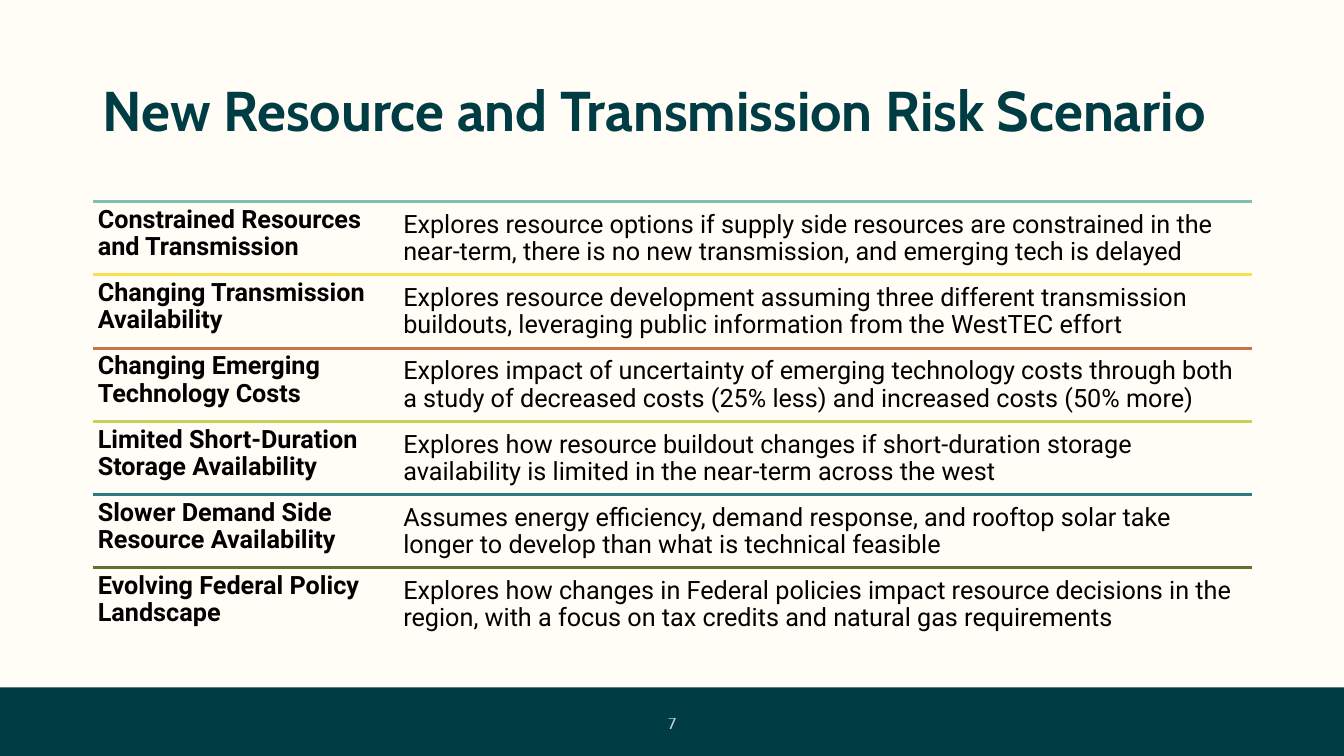
from lxml import etree
from pptx import Presentation
from pptx.dml.color import RGBColor
from pptx.enum.shapes import MSO_CONNECTOR, MSO_SHAPE
from pptx.enum.text import MSO_ANCHOR, PP_ALIGN
from pptx.oxml.ns import qn
from pptx.util import Inches, Pt

STRAIGHT = MSO_CONNECTOR.STRAIGHT
RECTANGLE = MSO_SHAPE.RECTANGLE
TOP, MIDDLE = MSO_ANCHOR.TOP, MSO_ANCHOR.MIDDLE
LEFT, CENTER = PP_ALIGN.LEFT, PP_ALIGN.CENTER

COLORS = {
    "cream": "FFFDF5", "deep_teal": "003C44", "black": "000000", "ice": "F9FBFD",
    "mint": "7EC1B1", "yellow": "F8E04E", "rust": "CE6F45",
    "lime": "C9D159", "teal": "2A7C7C", "olive": "617131",
}
HEADING_FONT, BODY_FONT = "Cabin", "Roboto"

SCENARIOS = [
    ("mint", "Constrained Resources and Transmission",
     "Explores resource options if supply side resources are constrained in the near-term, "
     "there is no new transmission, and emerging tech is delayed"),
    ("yellow", "Changing Transmission Availability",
     "Explores resource development assuming three different transmission buildouts, "
     "leveraging public information from the WestTEC effort"),
    ("rust", "Changing Emerging Technology Costs",
     "Explores impact of uncertainty of emerging technology costs through both a study of "
     "decreased costs (25% less) and increased costs (50% more)"),
    ("lime", "Limited Short-Duration Storage Availability",
     "Explores how resource buildout changes if short-duration storage availability is "
     "limited in the near-term across the west"),
    ("teal", "Slower Demand Side Resource Availability",
     "Assumes energy efficiency, demand response, and rooftop solar take longer to develop "
     "than what is technical feasible"),
    ("olive", "Evolving Federal Policy Landscape",
     "Explores how changes in Federal policies impact resource decisions in the region, "
     "with a focus on tax credits and natural gas requirements"),
]


def rgb(name):
    return RGBColor.from_string(COLORS[name])


def set_text(holder, text, font, size, color="black", bold=False, insets=(0.1, 0.05, 0.1, 0.05),
             anchor=TOP, align=LEFT, spacing=0.9):
    """Write one wrapped paragraph into holder and return its run."""
    frame = holder.text_frame
    frame.word_wrap = True
    frame.vertical_anchor = anchor
    frame.margin_left, frame.margin_top, frame.margin_right, frame.margin_bottom = map(Inches, insets)
    frame.text = text
    paragraph = frame.paragraphs[0]
    paragraph.alignment = align
    paragraph.line_spacing = spacing
    run = paragraph.runs[0]
    run.font.name, run.font.size, run.font.bold = font, Pt(size), bold
    run.font.color.rgb = rgb(color)
    return run


def add_footer(slide, left, top, width, height):
    band = slide.shapes.add_shape(RECTANGLE, *map(Inches, (left, top, width, height)))
    band.shadow.inherit = False
    band.fill.solid()
    band.fill.fore_color.rgb = rgb("deep_teal")
    band.line.fill.background()
    page = slide.shapes.add_textbox(*map(Inches, (left + 6.32, top + 0.14, 0.6, 0.43)))
    number = set_text(page, "7", HEADING_FONT, 12, "ice", insets=(0.1, 0.1, 0, 0.1),
                      anchor=MIDDLE, align=CENTER, spacing=1.0)
    number_color = number.font._element.find(".//" + qn("a:srgbClr"))
    etree.SubElement(number_color, qn("a:alpha"), val="80000")


def add_title(slide, left, top, width, height):
    title = slide.shapes.add_textbox(*map(Inches, (left, top, width, height)))
    set_text(title, "New Resource and Transmission Risk Scenario", HEADING_FONT, 40, "deep_teal",
             bold=True, anchor=MIDDLE)


def add_cell(shapes, left, top, width, height, text, inset, bold=False):
    """Place text in an unfilled rectangular outline."""
    right, bottom = left + width, top + height
    outline = shapes.build_freeform(Inches(left), Inches(top))
    corners = [(right, top), (right, bottom), (left, bottom)]
    outline.add_line_segments([(Inches(x), Inches(y)) for x, y in corners], close=True)
    cell = outline.convert_to_shape()
    cell.shadow.inherit = False
    cell.fill.background()
    cell.line.fill.background()
    set_text(cell, text, BODY_FONT, 18, bold=bold, insets=[inset] * 4)


def add_scenario(shapes, left, top, width, height, scenario):
    """Draw one row: coloured rule, bold name and description."""
    color, name, description = scenario
    rule = shapes.add_connector(STRAIGHT, *map(Inches, (left, top, left + width, top)))
    rule.line.color.rgb = rgb(color)
    rule.line.width = Pt(2.25)
    etree.SubElement(rule._element.spPr, qn("a:effectLst"))
    add_cell(shapes, left, top, 2.82, height, name, 0.05, bold=True)
    add_cell(shapes, left + 3.01, top + 0.03, width - 3.01, 0.66, description, 0.07)


def add_scenarios(slide, left, top, width, height):
    group = slide.shapes.add_group_shape()
    row_height = height / len(SCENARIOS)
    for row, scenario in enumerate(SCENARIOS):
        add_scenario(group.shapes, left, top + row * row_height, width, row_height, scenario)


def main():
    deck = Presentation()
    deck.slide_width, deck.slide_height = Inches(13.33), Inches(7.5)
    slide = deck.slides.add_slide(deck.slide_layouts[6])
    slide.background.fill.solid()
    slide.background.fill.fore_color.rgb = rgb("cream")
    add_footer(slide, 0, 6.82, 13.33, 0.68)
    add_title(slide, 0.92, 0.4, 11.5, 1.45)
    add_scenarios(slide, 0.92, 2, 11.5, 4.36)
    deck.save("out.pptx")


if __name__ == "__main__":
    main()
